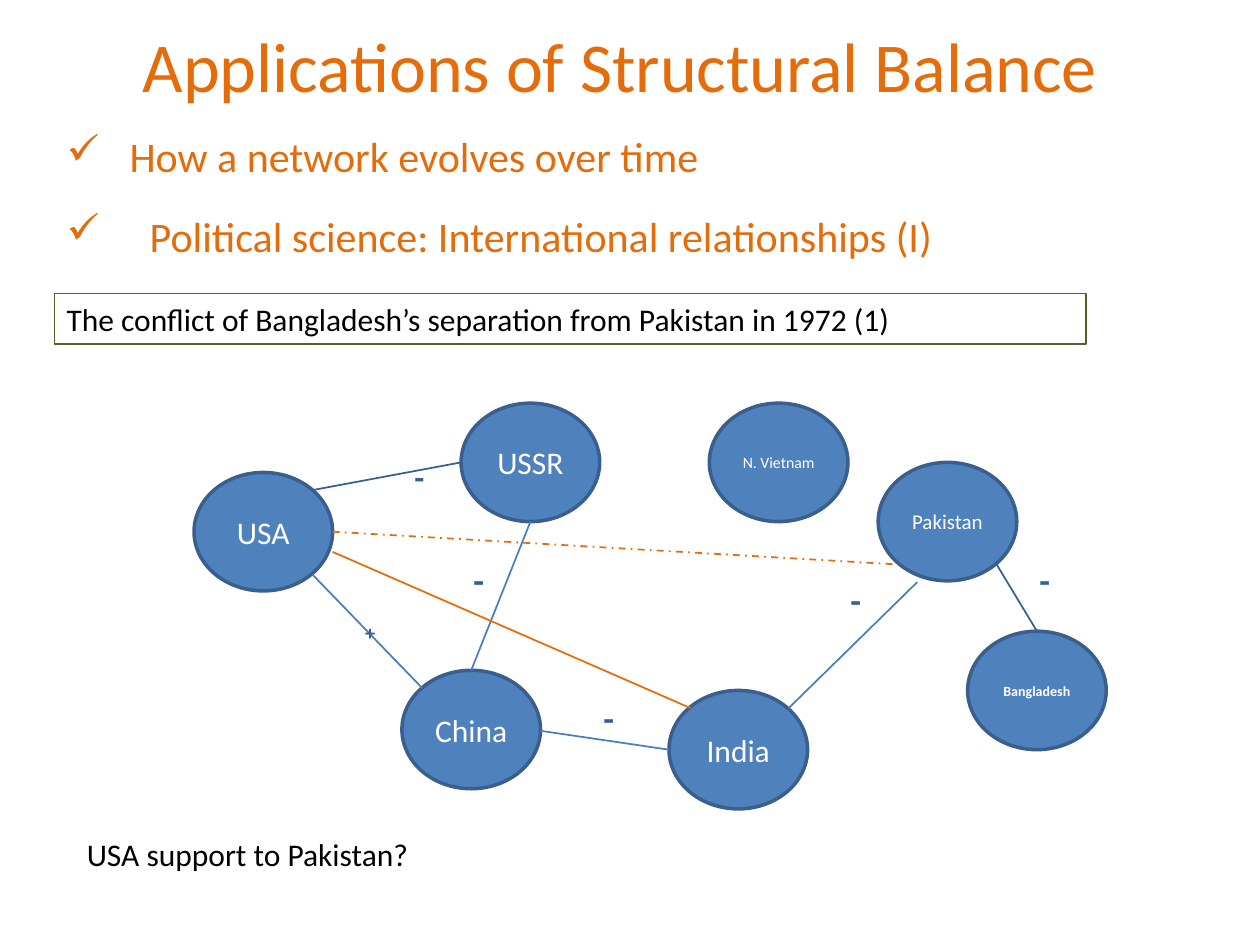
from dataclasses import dataclass
from typing import Optional

from lxml.etree import SubElement
from pptx import Presentation
from pptx.dml.color import RGBColor
from pptx.enum.dml import MSO_LINE_DASH_STYLE as DASH
from pptx.enum.shapes import MSO_CONNECTOR, MSO_SHAPE
from pptx.enum.text import MSO_ANCHOR, PP_ALIGN
from pptx.oxml.ns import qn
from pptx.util import Inches, Pt

COLORS = {
    "orange": "E46C0A", "black": "000000", "white": "FFFFFF", "green": "4F6228",
    "node": "4F81BD", "ring": "3A5F8C", "edge": "4B7EBC", "navy": "376092",
}
NODE_W, NODE_H = 1.1, 0.94
SIGN_W = 0.47


@dataclass
class Label:
    text: str
    x: float
    y: float
    w: float
    h: float
    size: float
    color: str
    bold: bool = False
    align: PP_ALIGN = PP_ALIGN.LEFT
    baseline: int = 0
    hanging: float = 0
    outline: Optional[str] = None


@dataclass
class Node:
    name: str
    x: float
    y: float
    size: float = 18
    bold: bool = False


@dataclass
class Edge:
    x1: float
    y1: float
    x2: float
    y2: float
    color: str = "edge"
    dash: Optional[DASH] = None


@dataclass
class Sign:
    x: float
    y: float
    text: str = "-"
    h: float = 0.44
    size: float = 20
    baseline: int = 0


LABELS = [
    Label("Applications of Structural Balance", 0.59, 0.13, 8.66, 0.77, 40, "orange", align=PP_ALIGN.CENTER),
    Label("How a network evolves over time", 0.43, 0.99, 7.72, 0.5, 24, "orange", hanging=0.5),
    Label("Political science: International relationships (I)", 0.43, 1.62, 8.03, 0.5, 24, "orange", hanging=0.66),
    Label("The conflict of Bangladesh’s separation from Pakistan in 1972 (1)",
          0.43, 2.33, 8.19, 0.4, 18, "black", outline="green"),
    Label("USA support to Pakistan?", 0.59, 6.58, 4.25, 0.4, 18, "black"),
]
NODES = [
    Node("USA", 1.54, 3.75),
    Node("USSR", 3.66, 3.2),
    Node("China", 3.19, 5.32),
    Node("India", 5.31, 5.48),
    Node("Pakistan", 6.97, 3.67, 12),
    Node("Bangladesh", 7.68, 5.01, 8, True),
    Node("N. Vietnam", 5.63, 3.2, 9),
]
EDGES = [
    Edge(4.21, 4.14, 3.74, 5.32),
    Edge(4.29, 5.8, 5.31, 5.95),
    Edge(2.48, 4.56, 3.35, 5.46),
    Edge(7.28, 4.62, 6.26, 5.62),
    Edge(2.64, 4.38, 5.48, 5.62, "orange"),
    Edge(2.64, 4.22, 7.13, 4.48, "orange", DASH.DASH_DOT),
    Edge(2.48, 3.89, 3.66, 3.67, "navy"),
    Edge(7.91, 4.48, 8.23, 5.01, "navy"),
]
SIGNS = [
    Sign(3.66, 4.38), Sign(4.69, 5.48), Sign(6.65, 4.54), Sign(8.15, 4.38),
    Sign(2.8, 4.69, "+", 0.33, 20, -25),
    Sign(3.19, 3.28, "-", 0.46, 32, -25),
]


def rgb(name: str) -> RGBColor:
    return RGBColor.from_string(COLORS[name])


def write(tf, text: str, size: float, color: str, bold: bool, align: PP_ALIGN):
    p = tf.paragraphs[0]
    p.alignment = align
    r = p.add_run()
    r.text = text
    for key, value in {"name": "Calibri", "size": Pt(size), "bold": bold}.items():
        setattr(r.font, key, value)
    r.font.color.rgb = rgb(color)
    return p, r


def add_label(s, item: Label) -> None:
    box = [Inches(v) for v in (item.x, item.y, item.w, item.h)]
    if item.outline:
        sp = s.shapes.add_shape(MSO_SHAPE.RECTANGLE, *box)
        sp.shadow.inherit = False
        sp.fill.background()
        sp.line.color.rgb = rgb(item.outline)
        sp.line.width = Pt(0.75)
    else:
        sp = s.shapes.add_textbox(*box)
    tf = sp.text_frame
    tf.word_wrap = True
    tf.vertical_anchor = MSO_ANCHOR.TOP
    p, r = write(tf, item.text, item.size, item.color, item.bold, item.align)
    if item.baseline:
        r._r.get_or_add_rPr().set("baseline", str(item.baseline * 1000))
    if item.hanging:
        pPr = p._p.get_or_add_pPr()
        pPr.set("marL", str(Inches(item.hanging)))
        pPr.set("indent", str(-Inches(item.hanging)))
        SubElement(pPr, qn("a:buChar")).set("char", "✓")


def add_node(s, node: Node) -> None:
    sp = s.shapes.add_shape(MSO_SHAPE.OVAL, Inches(node.x), Inches(node.y), Inches(NODE_W), Inches(NODE_H))
    sp.shadow.inherit = False
    sp.fill.solid()
    sp.fill.fore_color.rgb = rgb("node")
    sp.line.color.rgb = rgb("ring")
    sp.line.width = Pt(2)
    tf = sp.text_frame
    frame = {"word_wrap": True, "vertical_anchor": MSO_ANCHOR.MIDDLE, "margin_left": 0, "margin_right": 0}
    for key, value in frame.items():
        setattr(tf, key, value)
    write(tf, node.name, node.size, "white", node.bold, PP_ALIGN.CENTER)


def add_edge(s, edge: Edge) -> None:
    ends = [Inches(v) for v in (edge.x1, edge.y1, edge.x2, edge.y2)]
    line = s.shapes.add_connector(MSO_CONNECTOR.STRAIGHT, *ends)
    line.line.color.rgb = rgb(edge.color)
    line.line.width = Pt(1)
    if edge.dash:
        line.line.dash_style = edge.dash
    SubElement(line._element.spPr, qn("a:effectLst"))


def add_sign(s, sign: Sign) -> None:
    add_label(s, Label(sign.text, sign.x, sign.y, SIGN_W, sign.h, sign.size, "navy", True, baseline=sign.baseline))


def main() -> None:
    """Build the structural balance slide."""
    prs = Presentation()
    prs.slide_width, prs.slide_height = Inches(10), Inches(7.5)
    s = prs.slides.add_slide(prs.slide_layouts[6])
    for draw, items in ((add_label, LABELS), (add_node, NODES), (add_edge, EDGES), (add_sign, SIGNS)):
        for item in items:
            draw(s, item)
    prs.save("out.pptx")


if __name__ == "__main__":
    main()
